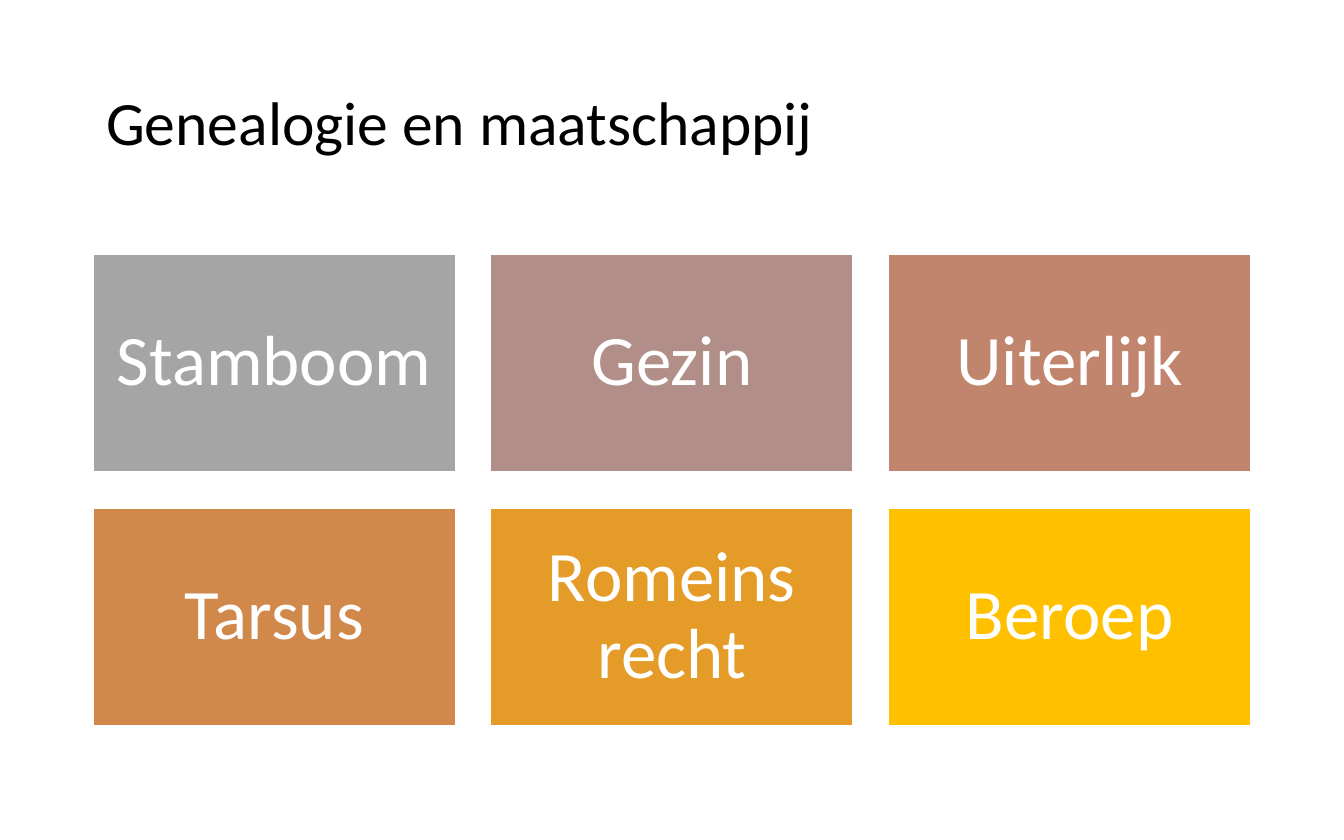
from dataclasses import dataclass

from pptx import Presentation
from pptx.dml.color import RGBColor
from pptx.enum.shapes import MSO_SHAPE
from pptx.enum.text import MSO_ANCHOR, PP_ALIGN
from pptx.slide import Slide
from pptx.text.text import TextFrame
from pptx.util import Inches, Pt

RECTANGLE = MSO_SHAPE.RECTANGLE
MIDDLE = MSO_ANCHOR.MIDDLE
LEFT, CENTER = PP_ALIGN.LEFT, PP_ALIGN.CENTER

FONT = "Calibri"
COLORS = {
    "black": "000000",
    "white": "FFFFFF",
    "gray": "A5A5A5",
    "mauve": "B18F88",
    "clay": "C1846C",
    "copper": "D1884B",
    "amber": "E59B27",
    "gold": "FFC000",
}

MARGIN = 0.69
CONTENT_WIDTH = 8.62
COLUMNS = 3
TILE_WIDTH, TILE_HEIGHT = 2.7, 1.62
TILES_TOP = 1.89
COLUMN_STEP = (CONTENT_WIDTH - TILE_WIDTH) / (COLUMNS - 1)
ROW_STEP = 1.89
TILE_INSET = 0.16


@dataclass
class Tile:
    label: str
    color: str


TILES = [
    Tile("Stamboom", "gray"),
    Tile("Gezin", "mauve"),
    Tile("Uiterlijk", "clay"),
    Tile("Tarsus", "copper"),
    Tile("Romeins recht", "amber"),
    Tile("Beroep", "gold"),
]


def rgb(name: str) -> RGBColor:
    return RGBColor.from_string(COLORS[name])


def write_text(frame: TextFrame, text: str, size: float, color: str, align: PP_ALIGN) -> None:
    frame.text = text
    frame.word_wrap = True
    frame.vertical_anchor = MIDDLE
    para = frame.paragraphs[0]
    para.alignment = align
    para.line_spacing = 0.9
    font = para.runs[0].font
    font.name = FONT
    font.size = Pt(size)
    font.color.rgb = rgb(color)


def add_title(page: Slide, text: str) -> None:
    title = page.shapes.title
    title.left, title.top = Inches(MARGIN), Inches(0.33)
    title.width, title.height = Inches(CONTENT_WIDTH), Inches(1.21)
    write_text(title.text_frame, text, 33, "black", LEFT)


def add_tile(page: Slide, tile: Tile, row: int, column: int) -> None:
    box = page.shapes.add_shape(
        RECTANGLE,
        Inches(MARGIN + column * COLUMN_STEP),
        Inches(TILES_TOP + row * ROW_STEP),
        Inches(TILE_WIDTH),
        Inches(TILE_HEIGHT),
    )
    box.shadow.inherit = False
    box.fill.solid()
    box.fill.fore_color.rgb = rgb(tile.color)
    box.line.color.rgb = rgb("white")
    box.line.width = Pt(1)
    frame = box.text_frame
    frame.margin_left = frame.margin_right = Inches(TILE_INSET)
    frame.margin_top = frame.margin_bottom = Inches(TILE_INSET)
    write_text(frame, tile.label, 38, "white", CENTER)


def main() -> None:
    deck = Presentation()
    deck.slide_width, deck.slide_height = Inches(10), Inches(6.25)
    page = deck.slides.add_slide(deck.slide_layouts[5])
    add_title(page, "Genealogie en maatschappij")
    for index, tile in enumerate(TILES):
        row, column = divmod(index, COLUMNS)
        add_tile(page, tile, row, column)
    deck.save("out.pptx")


if __name__ == "__main__":
    main()
